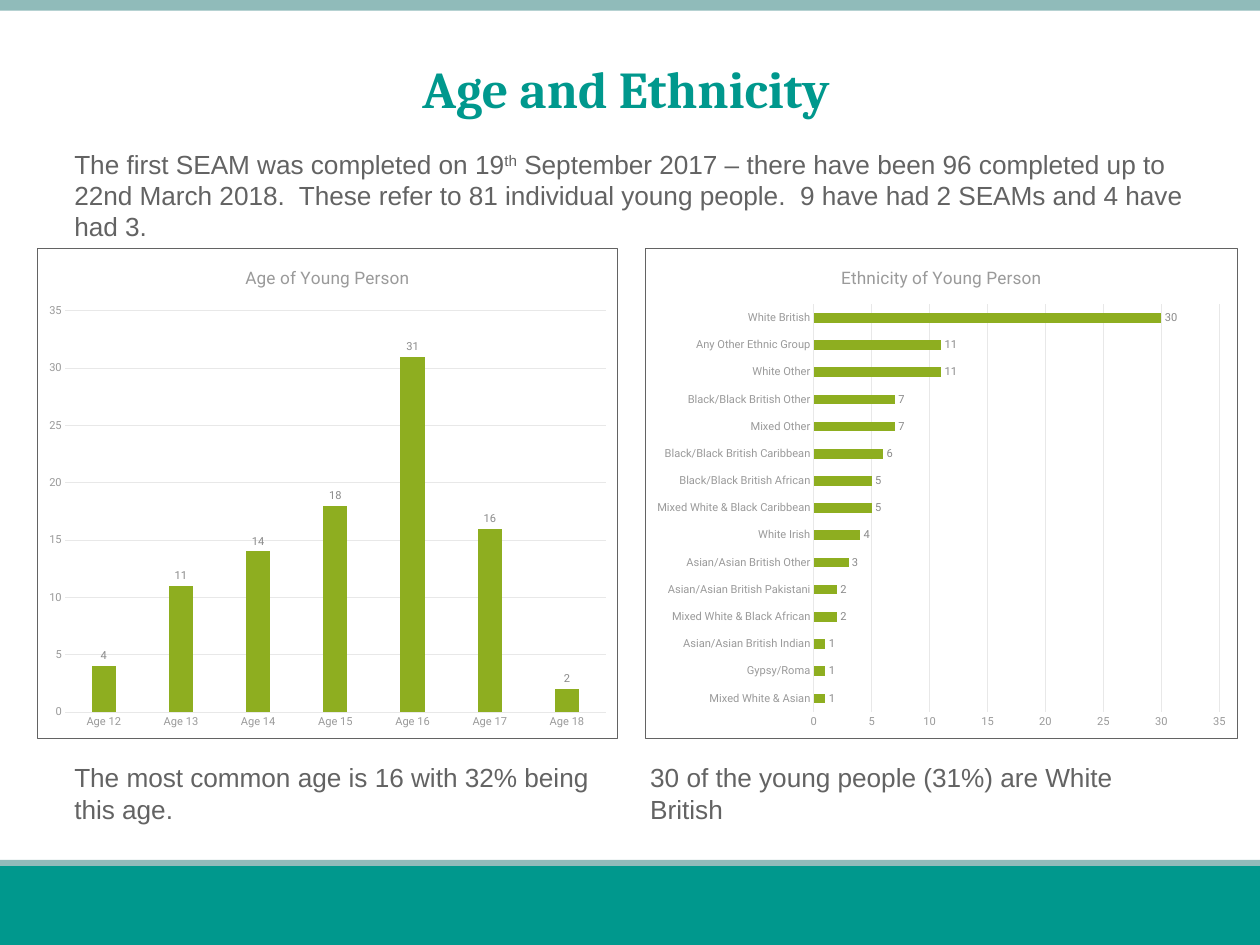
from lxml.etree import fromstring
from pptx import Presentation
from pptx.chart.data import CategoryChartData
from pptx.dml.color import RGBColor
from pptx.enum.chart import XL_CHART_TYPE, XL_LABEL_POSITION, XL_TICK_MARK
from pptx.enum.shapes import MSO_SHAPE
from pptx.enum.text import MSO_ANCHOR, MSO_AUTO_SIZE, PP_ALIGN
from pptx.util import Inches, Pt

TEAL = RGBColor(0x00, 0x98, 0x8D)
SAGE = RGBColor(0x90, 0xBB, 0xBA)
GREEN = RGBColor(0x8E, 0xAE, 0x20)
DARK = RGBColor(0x63, 0x63, 0x63)
LABEL = RGBColor(0x8A, 0x8A, 0x8A)
GREY = RGBColor(0x9A, 0x9A, 0x9A)
PALE = RGBColor(0xE8, 0xE8, 0xE8)

WIDE, HIGH = 14.22, 10.67
BORDER = (
    '<c:spPr xmlns:c="http://schemas.openxmlformats.org/drawingml/2006/chart" '
    'xmlns:a="http://schemas.openxmlformats.org/drawingml/2006/main">'
    f'<a:noFill/><a:ln w="9525"><a:solidFill><a:srgbClr val="{str(DARK)}"/>'
    '</a:solidFill></a:ln></c:spPr>')

AGES = [("Age 12", 4), ("Age 13", 11), ("Age 14", 14), ("Age 15", 18),
        ("Age 16", 31), ("Age 17", 16), ("Age 18", 2)]
GROUPS = [
    ("Mixed White & Asian", 1), ("Gypsy/Roma", 1),
    ("Asian/Asian British Indian", 1), ("Mixed White & Black African", 2),
    ("Asian/Asian British Pakistani", 2), ("Asian/Asian British Other", 3),
    ("White Irish", 4), ("Mixed White & Black Caribbean", 5),
    ("Black/Black British African", 5), ("Black/Black British Caribbean", 6),
    ("Mixed Other", 7), ("Black/Black British Other", 7),
    ("White Other", 11), ("Any Other Ethnic Group", 11),
    ("White British", 30)]


def style(font, name, size, color, bold=False):
    font.name, font.size, font.bold = name, Pt(size), bold
    font.color.rgb = color


def add_band(slide, top, high, color):
    band = slide.shapes.add_shape(
        MSO_SHAPE.RECTANGLE, 0, Inches(top), Inches(WIDE), Inches(high))
    band.shadow.inherit = False
    band.fill.solid()
    band.fill.fore_color.rgb = color
    band.line.fill.background()


def set_title(slide, text):
    title = slide.shapes.title
    title.left, title.top = Inches(0.96), Inches(0.57)
    title.width, title.height = Inches(12.27), Inches(0.84)
    frame = title.text_frame
    frame.auto_size = MSO_AUTO_SIZE.NONE
    frame.vertical_anchor = MSO_ANCHOR.MIDDLE
    frame.margin_left = frame.margin_top = frame.margin_bottom = 0
    frame.margin_right = Inches(0.06)
    para = frame.paragraphs[0]
    para.alignment = PP_ALIGN.CENTER
    run = para.add_run()
    run.text = text
    style(run.font, "Cambria", 42, TEAL, True)


def add_text(slide, left, top, wide, high, *parts):
    """Every second part is raised."""
    box = slide.shapes.add_textbox(
        Inches(left), Inches(top), Inches(wide), Inches(high))
    frame = box.text_frame
    frame.word_wrap = True
    for index, part in enumerate(parts):
        run = frame.paragraphs[0].add_run()
        run.text = part
        style(run.font, "Arial", 21.3, DARK)
        if index % 2:
            run.font._element.set("baseline", "30000")


def add_graph(slide, kind, left, wide, title, rows, gap, lap=None):
    data = CategoryChartData()
    data.categories = [name for name, count in rows]
    data.add_series("Series 1", [count for name, count in rows])
    chart = slide.shapes.add_chart(
        kind, Inches(left), Inches(2.8), Inches(wide), Inches(5.54), data).chart
    style(chart.font, "Roboto", 10, DARK)
    chart.has_legend = False
    chart._chartSpace.chart.addnext(fromstring(BORDER))

    # Chart title
    chart.has_title = True
    run = chart.chart_title.text_frame.paragraphs[0].add_run()
    run.text = title
    style(run.font, "Roboto", 14, GREY)
    chart.chart_title.include_in_layout = False

    # Axes
    for axis in (chart.category_axis, chart.value_axis):
        axis.major_tick_mark = axis.minor_tick_mark = XL_TICK_MARK.NONE
        style(axis.tick_labels.font, "Roboto", 9, GREY)
    cats, vals = chart.category_axis, chart.value_axis
    vals.minimum_scale, vals.maximum_scale, vals.major_unit = 0, 35, 5
    vals.format.line.fill.background()
    vals.has_major_gridlines = True
    for line in (cats.format.line, vals.major_gridlines.format.line):
        line.color.rgb = PALE
        line.width = Pt(0.75)

    # Bars and their labels
    plot = chart.plots[0]
    plot.vary_by_categories = False
    plot.gap_width = gap
    if lap is not None:
        plot.overlap = lap
    bars = plot.series[0]
    bars.format.fill.solid()
    bars.format.fill.fore_color.rgb = GREEN
    labels = bars.data_labels
    labels.show_value = True
    labels.position = XL_LABEL_POSITION.OUTSIDE_END
    style(labels.font, "Roboto", 9, LABEL)


def main():
    deck = Presentation()
    deck.slide_width, deck.slide_height = Inches(WIDE), Inches(HIGH)
    slide = deck.slides.add_slide(deck.slide_layouts[5])

    # Bands at top and foot
    add_band(slide, 0, 0.12, SAGE)
    add_band(slide, 9.71, 0.96, SAGE)
    add_band(slide, 9.78, 0.89, TEAL)

    # Title and text
    set_title(slide, "Age and Ethnicity")
    add_text(slide, 0.74, 1.62, 12.75, 1.18,
             "The first SEAM was completed on 19", "th",
             " September 2017 – there have been 96 completed up to 22nd March "
             "2018.  These refer to 81 individual young people.  9 have had 2 "
             "SEAMs and 4 have had 3.")
    add_text(slide, 0.74, 8.55, 6.23, 0.82,
             "The most common age is 16 with 32% being this age.")
    add_text(slide, 7.24, 8.55, 6.23, 0.82,
             "30 of the young people (31%) are White British")

    # Charts
    add_graph(slide, XL_CHART_TYPE.COLUMN_CLUSTERED, 0.42, 6.55,
              "Age of Young Person", AGES, 219, -27)
    add_graph(slide, XL_CHART_TYPE.BAR_CLUSTERED, 7.28, 6.69,
              "Ethnicity of Young Person", GROUPS, 182)

    deck.save("out.pptx")


if __name__ == "__main__":
    main()
